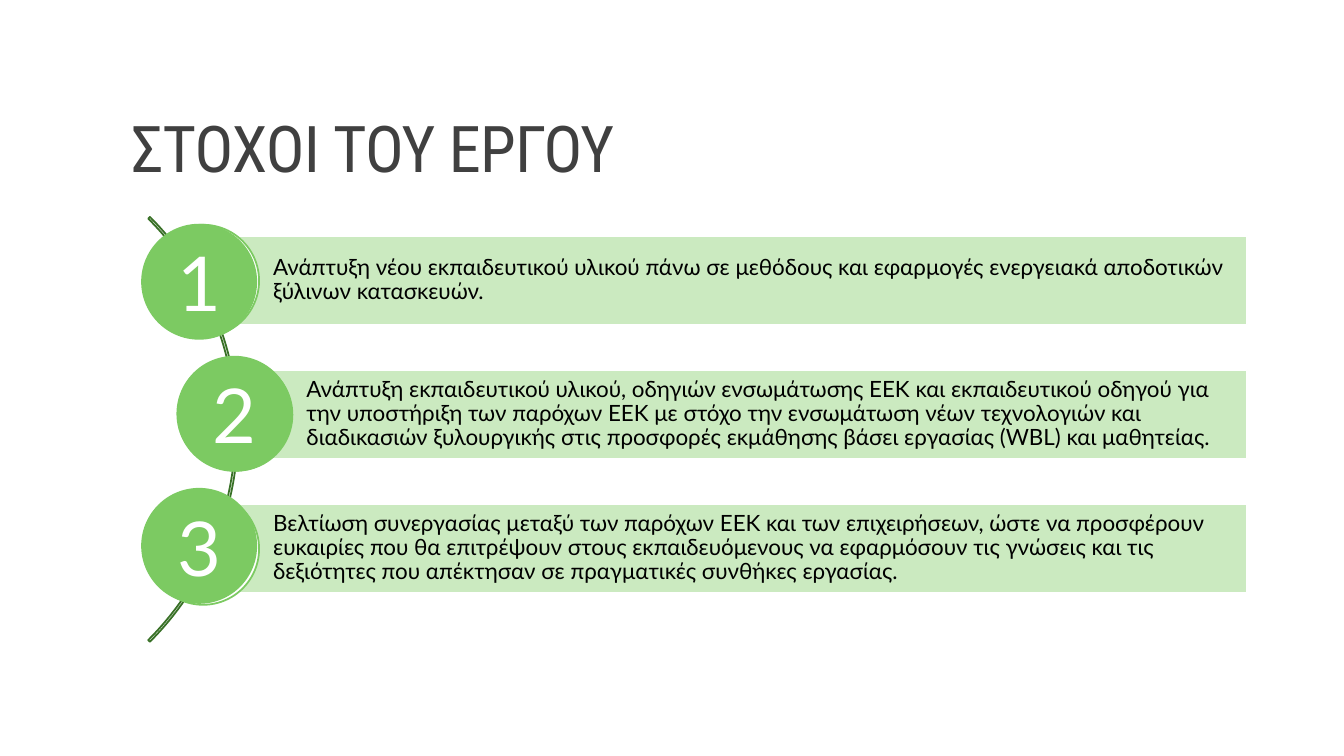
"""Build the slide that lists the three goals of the project."""
from pptx import Presentation
from pptx import util as u
from pptx.dml.color import RGBColor
from pptx.enum import shapes, text

GOALS = [
    "Ανάπτυξη νέου εκπαιδευτικού υλικού πάνω σε μεθόδους και εφαρμογές "
    "ενεργειακά αποδοτικών ξύλινων κατασκευών.",
    "Ανάπτυξη εκπαιδευτικού υλικού, οδηγιών ενσωμάτωσης ΕΕΚ και εκπαιδευτικού "
    "οδηγού για την υποστήριξη των παρόχων ΕΕΚ με στόχο την ενσωμάτωση νέων "
    "τεχνολογιών και διαδικασιών ξυλουργικής στις προσφορές εκμάθησης βάσει "
    "εργασίας (WBL) και μαθητείας.",
    "Βελτίωση συνεργασίας μεταξύ των παρόχων ΕΕΚ και των επιχειρήσεων, ώστε να "
    "προσφέρουν ευκαιρίες που θα επιτρέψουν στους εκπαιδευόμενους να εφαρμόσουν "
    "τις γνώσεις και τις δεξιότητες που απέκτησαν σε πραγματικές συνθήκες εργασίας.",
]
GREEN = "7CCA62"
RIGHT = 12.37


def rgb(value):
    """Return the colour for a hex string."""
    return RGBColor.from_string(value)


def write(sp, content, size, color, font="Lato", align=text.PP_ALIGN.LEFT,
          anchor=text.MSO_ANCHOR.MIDDLE, spacing=None, insets=None, tracking=None):
    """Put one formatted paragraph into a shape."""
    tf = sp.text_frame
    tf.word_wrap = True
    tf.auto_size = text.MSO_AUTO_SIZE.NONE
    tf.vertical_anchor = anchor
    if insets:
        tf.margin_left, tf.margin_top, tf.margin_right, tf.margin_bottom = map(u.Inches, insets)
    p = tf.paragraphs[0]
    p.alignment = align
    if spacing:
        p.line_spacing = spacing
    r = p.add_run()
    r.text = content
    r.font.size = u.Pt(size)
    r.font.name = font
    r.font.color.rgb = rgb(color)
    if tracking:
        r.font._element.set("spc", str(tracking))


def add_shape(s, kind, left, top, width, height, fill=None, line=None):
    """Add a preset shape with a flat fill and outline."""
    sp = s.shapes.add_shape(kind, *map(u.Inches, (left, top, width, height)))
    sp.shadow.inherit = False
    if fill:
        sp.fill.solid()
        sp.fill.fore_color.rgb = rgb(fill)
    else:
        sp.fill.background()
    if line:
        sp.line.color.rgb = rgb(line)
        sp.line.width = u.Pt(1.25)
    else:
        sp.line.fill.background()
    return sp


def add_title(s, content):
    """Place and format the title placeholder."""
    sp = s.shapes.title
    sp.left, sp.top, sp.width, sp.height = map(u.Inches, (1.2, 0.31, 11, 1.59))
    write(sp, content, 46, "404040", font="Roboto Condensed",
          anchor=text.MSO_ANCHOR.BOTTOM, spacing=0.9, tracking=-50)


def add_arc(s):
    """Draw the thin arc that runs behind the numbers."""
    sp = add_shape(s, shapes.MSO_SHAPE.BLOCK_ARC, -3.6, 1.28, 5.96, 5.96, line="387026")
    for i, value in enumerate((189, 27, 0.004)):
        sp.adjustments[i] = value


def add_goal(s, index, goal):
    """Draw one goal bar with its ring and numbered disc."""
    middle = index == 1
    bar_left = 2.34 if middle else 2.01
    bar_top = 2.34 + 1.33 * index
    bar = add_shape(s, shapes.MSO_SHAPE.RECTANGLE, bar_left, bar_top,
                    RIGHT - bar_left, 0.88, "CBEAC0", "FFFFFF")
    write(bar, goal, 16, "000000", spacing=0.9, insets=(0.7, 0.04, 0.04, 0.04))
    add_shape(s, shapes.MSO_SHAPE.OVAL, bar_left - 0.55, bar_top - 0.11,
              1.11, 1.11, "FFFFFF", GREEN)
    disc = add_shape(s, shapes.MSO_SHAPE.OVAL, 1.75 if middle else 1.4,
                     2.22 + 1.31 * index, 1.15, 1.15, GREEN)
    write(disc, str(index + 1), 54, "FFFFFF", align=text.PP_ALIGN.CENTER)


def main():
    """Build and save the slide."""
    prs = Presentation()
    prs.slide_width, prs.slide_height = u.Inches(13.33), u.Inches(7.5)
    s = prs.slides.add_slide(prs.slide_layouts[5])
    add_title(s, "ΣΤΟΧΟΙ ΤΟΥ ΕΡΓΟΥ")
    add_arc(s)
    for index, goal in enumerate(GOALS):
        add_goal(s, index, goal)
    prs.save("out.pptx")


if __name__ == "__main__":
    main()
